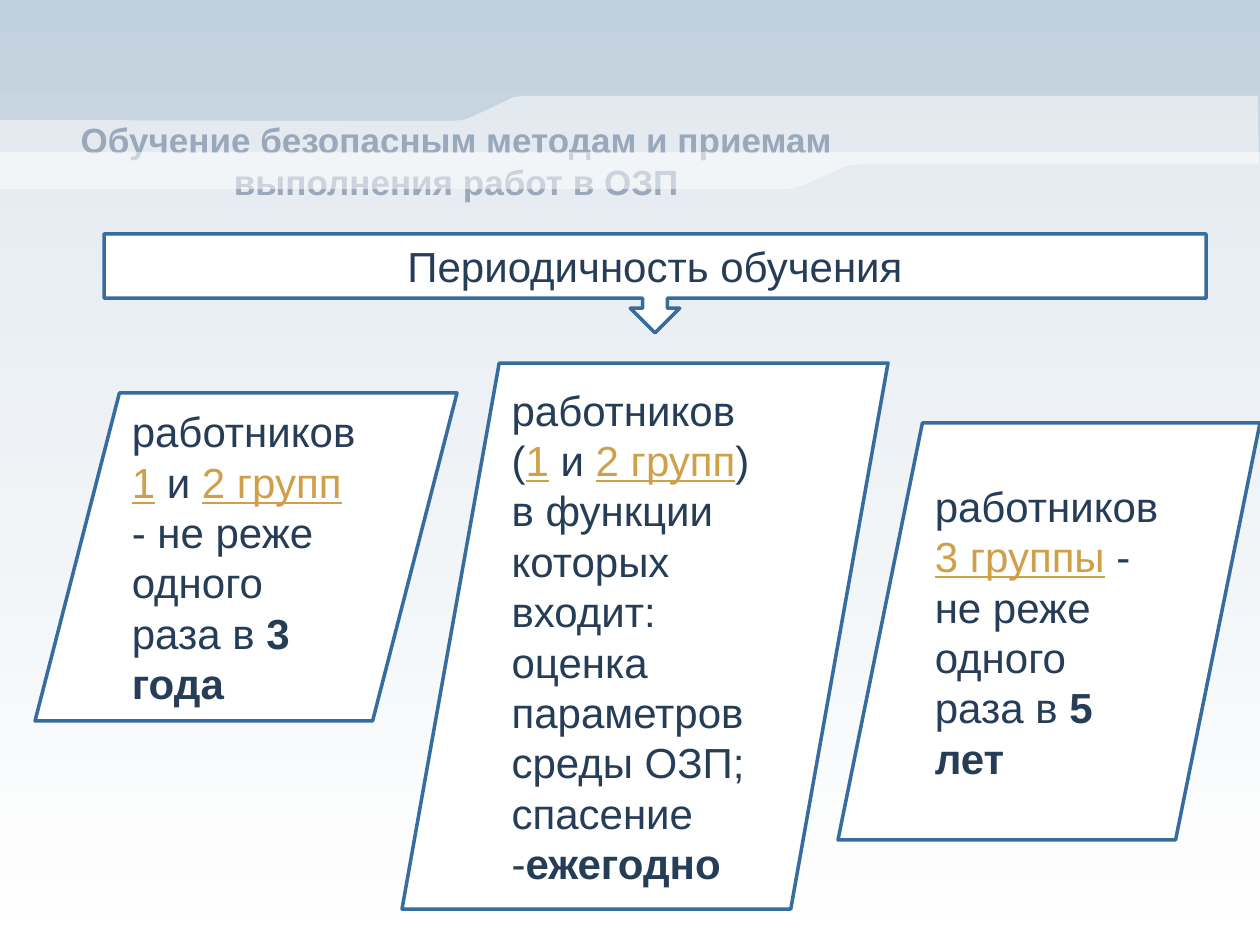
from dataclasses import dataclass
from lxml.etree import SubElement
from pptx import Presentation
from pptx.dml.color import RGBColor
from pptx.enum.shapes import MSO_SHAPE
from pptx.enum.text import MSO_ANCHOR, PP_ALIGN
from pptx.oxml.ns import qn
from pptx.util import Pt

PX = 914400 / 126  # EMU in one px


@dataclass(frozen=True)
class Theme:
    font: str = "Arial"
    title: str = "335175"
    text: str = "263D58"
    link: str = "CF9F49"
    line: str = "376D9E"
    fill: str = "FFFFFF"
    sky: str = "C1D0DD"
    head_size: int = 20
    size: int = 24
    width: int = 2


THEME = Theme()
LINK = {"color": THEME.link, "underline": True}
BOLD = {"bold": True}


def emu(*sizes):
    return [round(size * PX) for size in sizes]


def rgb(code):
    return RGBColor.from_string(code)


def add_run(para, text, color=THEME.text, size=THEME.size, **marks):
    run = para.add_run()
    run.text = text
    font = run.font
    for name, value in {"name": THEME.font, "size": Pt(size), **marks}.items():
        setattr(font, name, value)
    font.color.rgb = rgb(color)


def paint_back(slide):
    fill = slide.background.fill
    fill.gradient()
    fill.gradient_angle = 270
    for stop, color in zip(fill.gradient_stops, (THEME.sky, THEME.fill)):
        stop.color.rgb = rgb(color)


def add_veil(slide, points):
    """Half-transparent white outline through points in px."""
    start, *rest = points
    path = slide.shapes.build_freeform(*start, scale=PX)
    path.add_line_segments(rest, close=True)
    shape = path.convert_to_shape()
    shape.shadow.inherit = False
    shape.line.fill.background()
    shape.fill.solid()
    shape.fill.fore_color.rgb = rgb(THEME.fill)
    color = shape.fill._xPr.find(".//" + qn("a:srgbClr"))
    SubElement(color, qn("a:alpha"), val="50000")


def set_title(slide, box, text):
    title = slide.shapes.title
    title.left, title.top, title.width, title.height = emu(*box)
    frame = title.text_frame
    frame.word_wrap = True
    frame.vertical_anchor = MSO_ANCHOR.MIDDLE
    para = frame.paragraphs[0]
    para.alignment = PP_ALIGN.CENTER
    add_run(para, text, THEME.title, THEME.head_size, bold=True)


def add_box(slide, kind, box, paras, align=PP_ALIGN.LEFT):
    """Outlined shape; each paragraph is a list of (text, marks)."""
    shape = slide.shapes.add_shape(kind, *emu(*box))
    shape.shadow.inherit = False
    shape.fill.solid()
    shape.fill.fore_color.rgb = rgb(THEME.fill)
    shape.line.color.rgb = rgb(THEME.line)
    shape.line.width = Pt(THEME.width)
    frame = shape.text_frame
    frame.word_wrap = True
    frame.vertical_anchor = MSO_ANCHOR.MIDDLE
    for i, runs in enumerate(paras):
        para = frame.add_paragraph() if i else frame.paragraphs[0]
        para.alignment = align
        for text, marks in runs:
            add_run(para, text, **marks)


def main():
    deck = Presentation()
    deck.slide_width, deck.slide_height = emu(1260, 945)
    slide = deck.slides.add_slide(deck.slide_layouts[5])

    paint_back(slide)
    add_veil(slide, [(0, 152), (1260, 152), (1260, 945), (0, 945)])
    add_veil(slide, [(1258, 96), (525, 96), (514, 97), (476, 115), (464, 120),
                     (449, 121), (0, 120), (0, 189), (789, 189), (804, 185),
                     (849, 165), (872, 164), (1259, 164)])

    set_title(slide, (25, 107, 863, 108),
              "Обучение безопасным методам и приемам выполнения работ в ОЗП")
    add_box(slide, MSO_SHAPE.DOWN_ARROW_CALLOUT, (104, 234, 1102, 99),
            [[("Периодичность обучения", {})]], PP_ALIGN.CENTER)

    pair = [("1", LINK), (" и ", {}), ("2 групп", LINK)]
    term = (" - не реже одного раза в ", {})
    groups = [
        ((35, 393, 422, 328),
         [[("работников ", {}), *pair, term, ("3 года", BOLD)]]),
        ((838, 423, 422, 417),
         [[("работников ", {}), ("3 группы", LINK), term, ("5 лет", BOLD)]]),
        ((402, 363, 486, 546),
         [[("работников (", {}), *pair,
           (") в функции которых входит: оценка параметров среды ОЗП;", {})],
          [("спасение -", {}), ("ежегодно", BOLD)]]),
    ]
    for box, paras in groups:
        add_box(slide, MSO_SHAPE.FLOWCHART_DATA, box, paras)

    deck.save("out.pptx")


if __name__ == "__main__":
    main()
